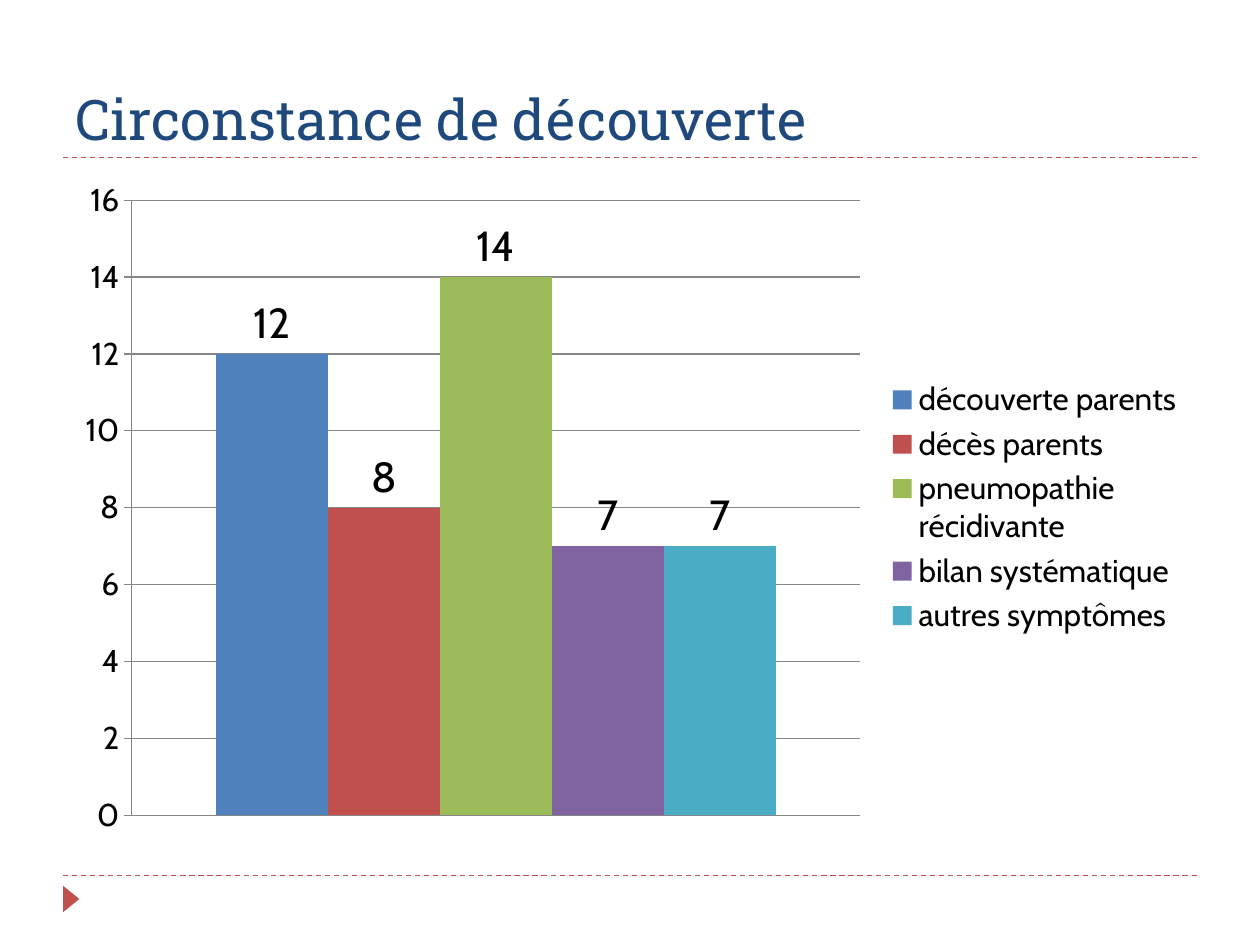
from lxml import etree
from pptx import Presentation
from pptx.chart.data import CategoryChartData
from pptx.dml.color import RGBColor
from pptx.enum.chart import XL_CHART_TYPE, XL_LABEL_POSITION, XL_LEGEND_POSITION, XL_TICK_MARK
from pptx.enum.dml import MSO_LINE
from pptx.enum.shapes import MSO_CONNECTOR, MSO_SHAPE
from pptx.enum.text import MSO_ANCHOR
from pptx.oxml.ns import qn
from pptx.util import Inches, Pt

COLUMNS = XL_CHART_TYPE.COLUMN_CLUSTERED
ABOVE = XL_LABEL_POSITION.OUTSIDE_END
RIGHT = XL_LEGEND_POSITION.RIGHT
OUTSIDE = XL_TICK_MARK.OUTSIDE
DASH = MSO_LINE.DASH
STRAIGHT = MSO_CONNECTOR.STRAIGHT
TRIANGLE = MSO_SHAPE.ISOSCELES_TRIANGLE
BOTTOM = MSO_ANCHOR.BOTTOM

LEFT, WIDTH = 0.5, 9
CIRCUMSTANCES = [
    ("découverte parents", 12, "4F81BD"),
    ("décès parents", 8, "C0504D"),
    ("pneumopathie récidivante", 14, "9BBB59"),
    ("bilan systématique", 7, "8064A2"),
    ("autres symptômes", 7, "4BACC6"),
]


def color(hex_value):
    return RGBColor.from_string(hex_value)


class SlideBuilder:
    heading_font, body_font = "Roboto Slab", "Cabin"
    heading, accent, text, grid = "1F497D", "C0504D", "000000", "868686"

    def __init__(self, slide):
        self.slide = slide

    def rule(self, y):
        line = self.slide.shapes.add_connector(
            STRAIGHT, Inches(LEFT), Inches(y), Inches(LEFT + WIDTH), Inches(y))
        line.line.color.rgb = color(self.accent)
        line.line.width = Pt(0.75)
        line.line.dash_style = DASH
        etree.SubElement(line._element.spPr, qn("a:effectLst"))

    def marker(self, x, y, width, height):
        arrow = self.slide.shapes.add_shape(
            TRIANGLE, Inches(x), Inches(y), Inches(width), Inches(height))
        arrow.rotation = 90
        arrow.shadow.inherit = False
        arrow.fill.solid()
        arrow.fill.fore_color.rgb = color(self.accent)
        arrow.line.fill.background()

    def title(self, wording, y, height):
        box = self.slide.shapes.add_textbox(
            Inches(LEFT), Inches(y), Inches(WIDTH), Inches(height))
        frame = box.text_frame
        frame.word_wrap = True
        frame.vertical_anchor = BOTTOM
        frame.text = wording
        font = frame.paragraphs[0].runs[0].font
        font.name, font.size = self.heading_font, Pt(32)
        font.color.rgb = color(self.heading)

    def set_font(self, font, size):
        font.name, font.size = self.body_font, Pt(size)
        font.color.rgb = color(self.text)

    def column_chart(self, rows, y, height):
        data = CategoryChartData()
        data.categories = ["1"]
        for name, count, _ in rows:
            data.add_series(name, [count])
        chart = self.slide.shapes.add_chart(
            COLUMNS, Inches(LEFT), Inches(y), Inches(WIDTH), Inches(height), data).chart
        self.set_font(chart.font, 18)
        chart.has_title = False
        chart.has_legend = True
        chart.legend.position = RIGHT
        chart.legend.include_in_layout = False

        # Axes
        chart.category_axis.visible = False
        counts = chart.value_axis
        counts.minimum_scale, counts.maximum_scale, counts.major_unit = 0, 16, 2
        counts.major_tick_mark = OUTSIDE
        counts.has_major_gridlines = True
        for line in (counts.format.line, counts.major_gridlines.format.line):
            line.color.rgb = color(self.grid)
            line.width = Pt(0.75)

        # Columns and their values
        plot = chart.plots[0]
        plot.vary_by_categories = False
        plot.gap_width, plot.overlap = 150, 0
        for series, (_, _, fill) in zip(plot.series, rows):
            series.format.fill.solid()
            series.format.fill.fore_color.rgb = color(fill)
            labels = series.data_labels
            labels.show_value = True
            labels.position = ABOVE
            self.set_font(labels.font, 24)


def main():
    deck = Presentation()
    deck.slide_width, deck.slide_height = Inches(10), Inches(7.5)
    builder = SlideBuilder(deck.slides.add_slide(deck.slide_layouts[6]))

    # Frame of the slide
    builder.rule(6.95)
    builder.rule(1.25)
    builder.marker(0.46, 7.07, 0.21, 0.13)

    # Content
    builder.title("Circonstance de découverte", 0.17, 1.08)
    builder.column_chart(CIRCUMSTANCES, 1.33, 5.4)
    deck.save("out.pptx")


if __name__ == "__main__":
    main()
